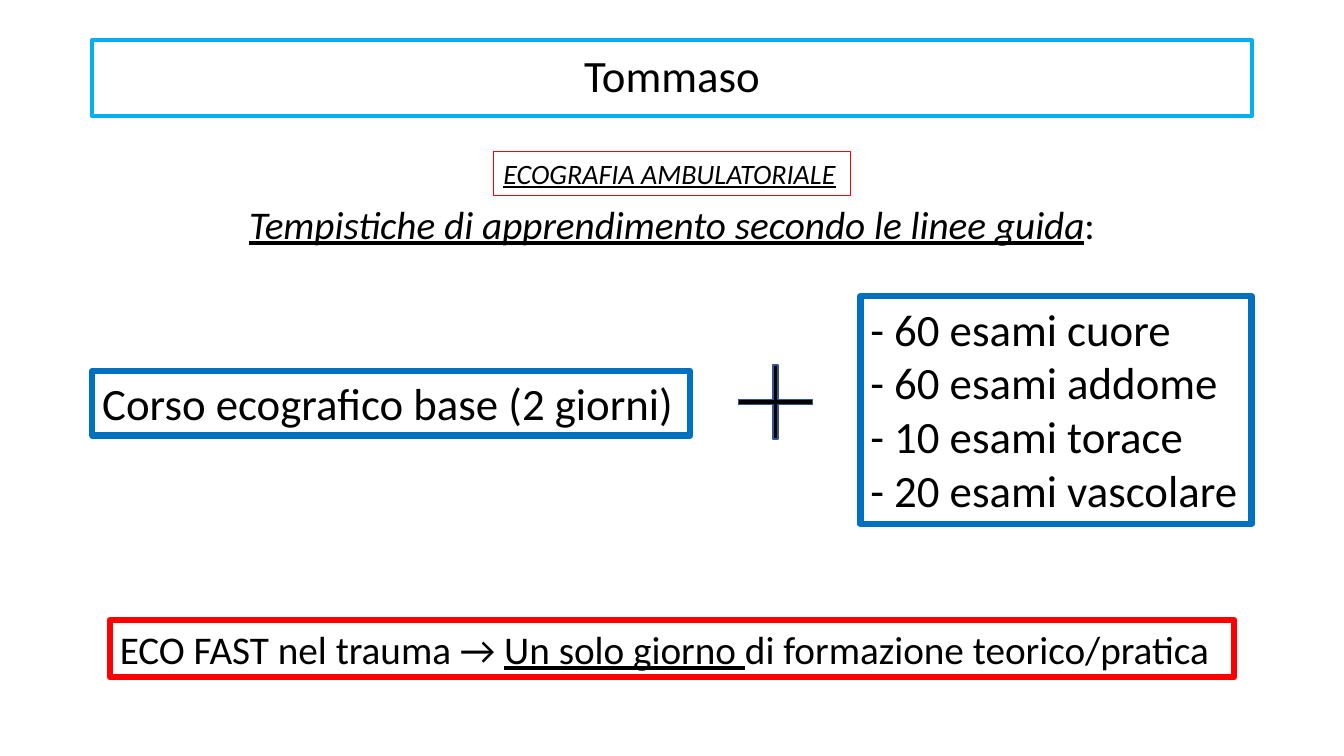
from pptx import Presentation
from pptx.dml.color import RGBColor
from pptx.enum.shapes import MSO_SHAPE
from pptx.enum.text import MSO_ANCHOR, MSO_AUTO_SIZE, PP_ALIGN
from pptx.util import Inches, Pt

CENTER, LEFT = PP_ALIGN.CENTER, PP_ALIGN.LEFT
MIDDLE, TOP = MSO_ANCHOR.MIDDLE, MSO_ANCHOR.TOP
GROW, FIXED = MSO_AUTO_SIZE.SHAPE_TO_FIT_TEXT, MSO_AUTO_SIZE.NONE
PLUS = MSO_SHAPE.MATH_PLUS

COLORS = {"text": "000000", "sky": "00B0F0", "blue": "0070C0",
          "red": "FF0000", "plus_edge": "325491"}
FONT = "Calibri"
WIDTH, HEIGHT = 13.33, 7.5
MARGIN = 0.0687

PLAIN = {"italic": False, "underline": False}
UNDERLINED = {"italic": False, "underline": True}
SLANTED = {"italic": True, "underline": True}
HEADING = {"alignment": CENTER, "line_spacing": 0.9}
SUBHEADING = {"alignment": CENTER, "line_spacing": 0.9, "space_before": Pt(10)}
BODY = {"alignment": LEFT}
WRAPPED = {"word_wrap": True, "auto_size": FIXED, "vertical_anchor": TOP}
CENTERED = {"word_wrap": True, "auto_size": FIXED, "vertical_anchor": MIDDLE}
FITTED = {"word_wrap": False, "auto_size": GROW, "vertical_anchor": TOP}

EXAMS = [(60, "cuore"), (60, "addome"), (10, "torace"), (20, "vascolare")]

BOXES = [
    {"side": "center", "top": 0.0533, "size": (0.8627, 0.1), "edge": ("sky", 3),
     "points": 32, "frame": CENTERED, "format": HEADING,
     "lines": [[("Tommaso", PLAIN)]]},
    {"side": "center", "top": 0.2653, "size": (0.7044, 0.0813), "edge": None,
     "points": 28, "frame": WRAPPED, "format": SUBHEADING,
     "lines": [[("Tempistiche di apprendimento secondo le linee guida", SLANTED),
                (":", PLAIN)]]},
    {"side": "center", "top": 0.2, "size": (0.2656, 0.0587), "edge": ("red", 0.75),
     "points": 20, "frame": FITTED, "format": BODY,
     "lines": [[("ECOGRAFIA AMBULATORIALE", SLANTED)]]},
    {"side": "left", "top": 0.4907, "size": (0.4449, 0.0853), "edge": ("blue", 4.5),
     "points": 32, "frame": FITTED, "format": BODY,
     "lines": [[("Corso ecografico base (2 giorni)", PLAIN)]]},
    {"side": "right", "top": 0.392, "size": (0.2911, 0.3013), "edge": ("blue", 4.5),
     "points": 32, "frame": FITTED, "format": BODY,
     "lines": [[(f"- {count} esami {area}", PLAIN)] for count, area in EXAMS]},
    {"side": "center", "top": 0.82, "size": (0.8365, 0.076), "edge": ("red", 4.5),
     "points": 28, "frame": FITTED, "format": BODY,
     "lines": [[("ECO FAST nel trauma → ", PLAIN), ("Un solo giorno ", UNDERLINED),
                ("di formazione teorico/pratica", PLAIN)]]},
]


def color(name):
    return RGBColor.from_string(COLORS[name])


def apply(target, values):
    for name, value in values.items():
        setattr(target, name, value)


def place(left, top, width, height):
    return (Inches(left * WIDTH), Inches(top * HEIGHT),
            Inches(width * WIDTH), Inches(height * HEIGHT))


def set_edge(shape, name, points):
    shape.line.color.rgb = color(name)
    shape.line.width = Pt(points)


def add_box(page, item):
    width, height = item["size"]
    left = {"left": MARGIN, "center": (1 - width) / 2,
            "right": 1 - MARGIN - width}[item["side"]]
    box = page.shapes.add_textbox(*place(left, item["top"], width, height))
    if item["edge"]:
        set_edge(box, *item["edge"])
    frame = box.text_frame
    apply(frame, item["frame"])
    for index, line in enumerate(item["lines"]):
        para = frame.add_paragraph() if index else frame.paragraphs[0]
        apply(para, item["format"])
        for text, style in line:
            span = para.add_run()
            span.text = text
            apply(span.font, {"name": FONT, "size": Pt(item["points"]), **style})
            span.font.color.rgb = color("text")


def add_plus(page):
    plus = page.shapes.add_shape(PLUS, *place(0.5394, 0.4653, 0.075, 0.1333))
    plus.adjustments[0] = 0.05
    plus.shadow.inherit = False
    plus.fill.solid()
    plus.fill.fore_color.rgb = color("text")
    set_edge(plus, "plus_edge", 1)


def main():
    deck = Presentation()
    deck.slide_width, deck.slide_height = Inches(WIDTH), Inches(HEIGHT)
    page = deck.slides.add_slide(deck.slide_layouts[6])
    for item in BOXES:
        add_box(page, item)
    add_plus(page)
    deck.save("out.pptx")


if __name__ == "__main__":
    main()
